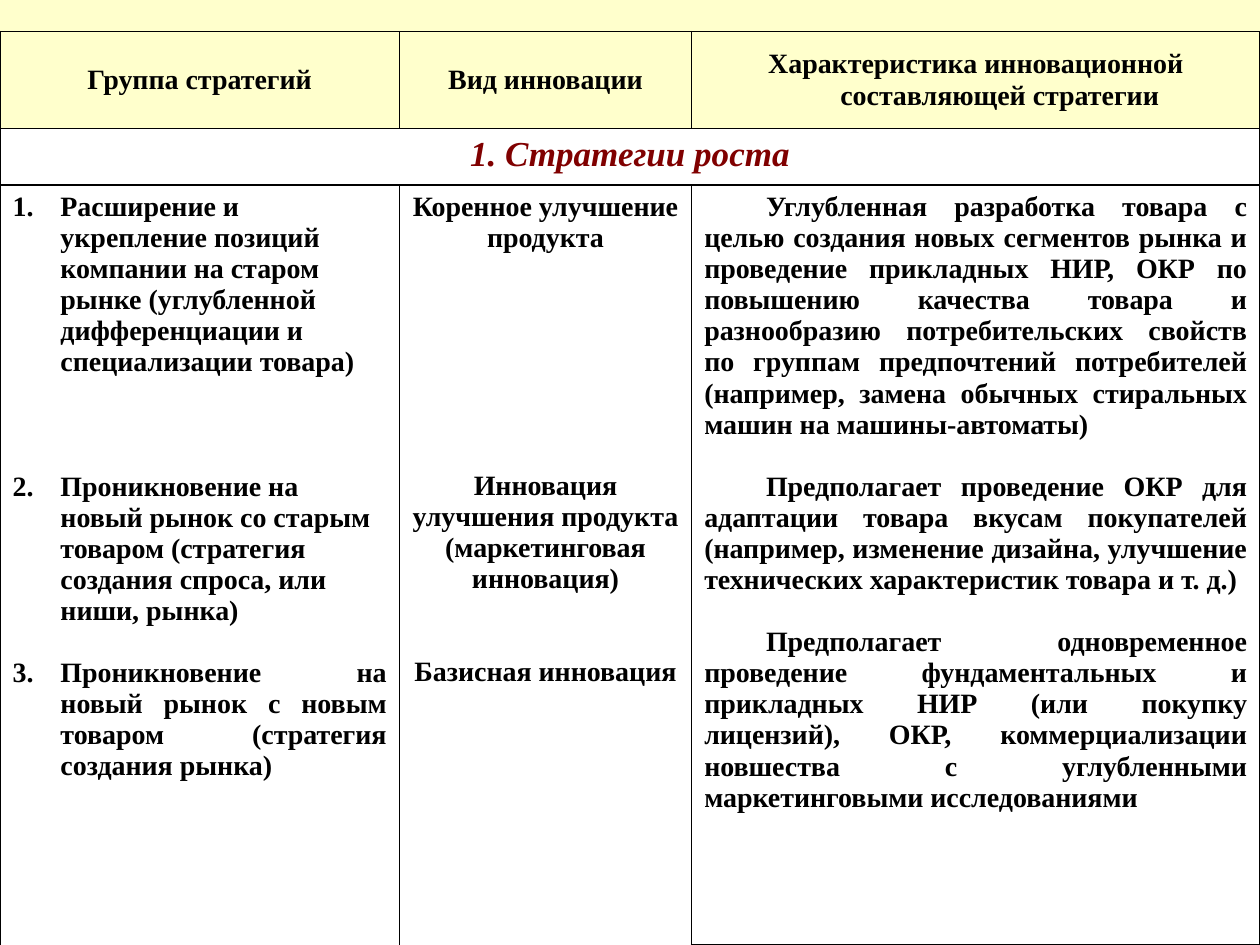
from dataclasses import dataclass

from lxml.etree import SubElement
from pptx import Presentation
from pptx.dml.color import RGBColor
from pptx.enum.text import MSO_ANCHOR as Anchor, PP_ALIGN as Align
from pptx.oxml.ns import qn
from pptx.util import Inches, Pt

CREAM = RGBColor(0xFF, 0xFF, 0xCC)
WHITE = RGBColor(0xFF, 0xFF, 0xFF)
BLACK = RGBColor(0x00, 0x00, 0x00)
MAROON = RGBColor(0x80, 0x00, 0x00)

FONT = "Times New Roman"
LINE = 17.7  # height of one 16 pt text line, in points
HANG = 0.38  # hanging indent, in inches
TOP = 0.25
COLS = (3.17, 2.32, 4.51)
ROWS = (0.77, 0.45, 6.03)


@dataclass(frozen=True)
class Entry:
    text: str
    gap: int = 0  # text lines left free above
    align: Align = Align.LEFT


HEADERS = (
    "Группа стратегий",
    "Вид инновации",
    "Характеристика инновационной составляющей стратегии",
)
GROUPS = (
    Entry("Расширение и укрепление позиций компании на старом рынке "
          "(углубленной дифференциации и специализации товара)"),
    Entry("Проникновение на новый рынок со старым товаром "
          "(стратегия создания спроса, или ниши, рынка)", 3),
    Entry("Проникновение на новый рынок с новым товаром "
          "(стратегия создания рынка)", 1, Align.JUSTIFY),
)
KINDS = (
    Entry("Коренное улучшение продукта", 0, Align.CENTER),
    Entry("Инновация улучшения продукта (маркетинговая инновация)", 7, Align.CENTER),
    Entry("Базисная инновация", 2, Align.CENTER),
)
FEATURES = (
    Entry("Углубленная разработка товара с целью создания новых сегментов рынка "
          "и проведение прикладных НИР, ОКР по повышению качества товара и "
          "разнообразию потребительских свойств по группам предпочтений "
          "потребителей (например, замена обычных стиральных машин на "
          "машины-автоматы)", 0, Align.JUSTIFY),
    Entry("Предполагает проведение ОКР для адаптации товара вкусам покупателей "
          "(например, изменение дизайна, улучшение технических характеристик "
          "товара и т. д.)", 1, Align.JUSTIFY),
    Entry("Предполагает одновременное проведение фундаментальных и прикладных НИР "
          "(или покупку лицензий), ОКР, коммерциализации новшества с "
          "углубленными маркетинговыми исследованиями", 1, Align.JUSTIFY),
)


def add_text(p, text: str, *, size: int = 16, color: RGBColor = BLACK,
             italic: bool = False, align: Align = Align.CENTER, gap: int = 0,
             left: float = 0, first: float = 0, numbered: bool = False) -> None:
    p.alignment = align
    p.space_before = Pt(gap * LINE)
    pPr = p._p.get_or_add_pPr()
    pPr.set("marL", str(Inches(left)))
    pPr.set("indent", str(Inches(first)))
    if numbered:
        SubElement(pPr, qn("a:buFont"), typeface=FONT)
        SubElement(pPr, qn("a:buAutoNum"), type="arabicPeriod")
    r = p.add_run()
    r.text = text
    r.font.name, r.font.size = FONT, Pt(size)
    r.font.bold, r.font.italic = True, italic
    r.font.color.rgb = color


def style_cell(cell, fill: RGBColor, open_bottom: bool = False) -> None:
    tcPr = cell._tc.get_or_add_tcPr()
    for side in "LRTB":
        ln = SubElement(tcPr, qn(f"a:ln{side}"), w=str(Pt(1)))
        if side == "B" and open_bottom:
            SubElement(ln, qn("a:noFill"))
        else:
            SubElement(SubElement(ln, qn("a:solidFill")), qn("a:srgbClr"), val=str(BLACK))
    cell.fill.solid()
    cell.fill.fore_color.rgb = fill


def fill_cell(cell, entries: tuple[Entry, ...], **fmt) -> None:
    tf = cell.text_frame
    for i, e in enumerate(entries):
        p = tf.add_paragraph() if i else tf.paragraphs[0]
        add_text(p, e.text, gap=e.gap, align=e.align, **fmt)


def main() -> None:
    prs = Presentation()
    prs.slide_width, prs.slide_height = Inches(10), Inches(7.5)
    s = prs.slides.add_slide(prs.slide_layouts[6])
    s.background.fill.solid()
    s.background.fill.fore_color.rgb = CREAM

    # Table grid
    table = s.shapes.add_table(len(ROWS), len(COLS), 0, Inches(TOP),
                               Inches(sum(COLS)), Inches(sum(ROWS))).table
    table.first_row = table.horz_banding = False
    for col, width in zip(table.columns, COLS):
        col.width = Inches(width)
    for row, height in zip(table.rows, ROWS):
        row.height = Inches(height)
    for i in range(len(ROWS)):
        for j in range(len(COLS)):
            style_cell(table.cell(i, j), WHITE if i else CREAM,
                       open_bottom=i == 2 and j < 2)

    # Header row
    for j, header in enumerate(HEADERS):
        cell = table.cell(0, j)
        cell.vertical_anchor = Anchor.MIDDLE
        add_text(cell.text_frame.paragraphs[0], header, left=HANG, first=-HANG)

    # Section row
    section = table.cell(1, 0)
    section.merge(table.cell(1, 2))
    add_text(section.text_frame.paragraphs[0], "1. Стратегии роста", size=20,
             color=MAROON, italic=True, left=HANG, first=-HANG)

    # Strategies
    fill_cell(table.cell(2, 0), GROUPS, left=HANG, first=-HANG, numbered=True)
    fill_cell(table.cell(2, 1), KINDS)
    fill_cell(table.cell(2, 2), FEATURES, first=0.49)

    prs.save("out.pptx")


if __name__ == "__main__":
    main()
